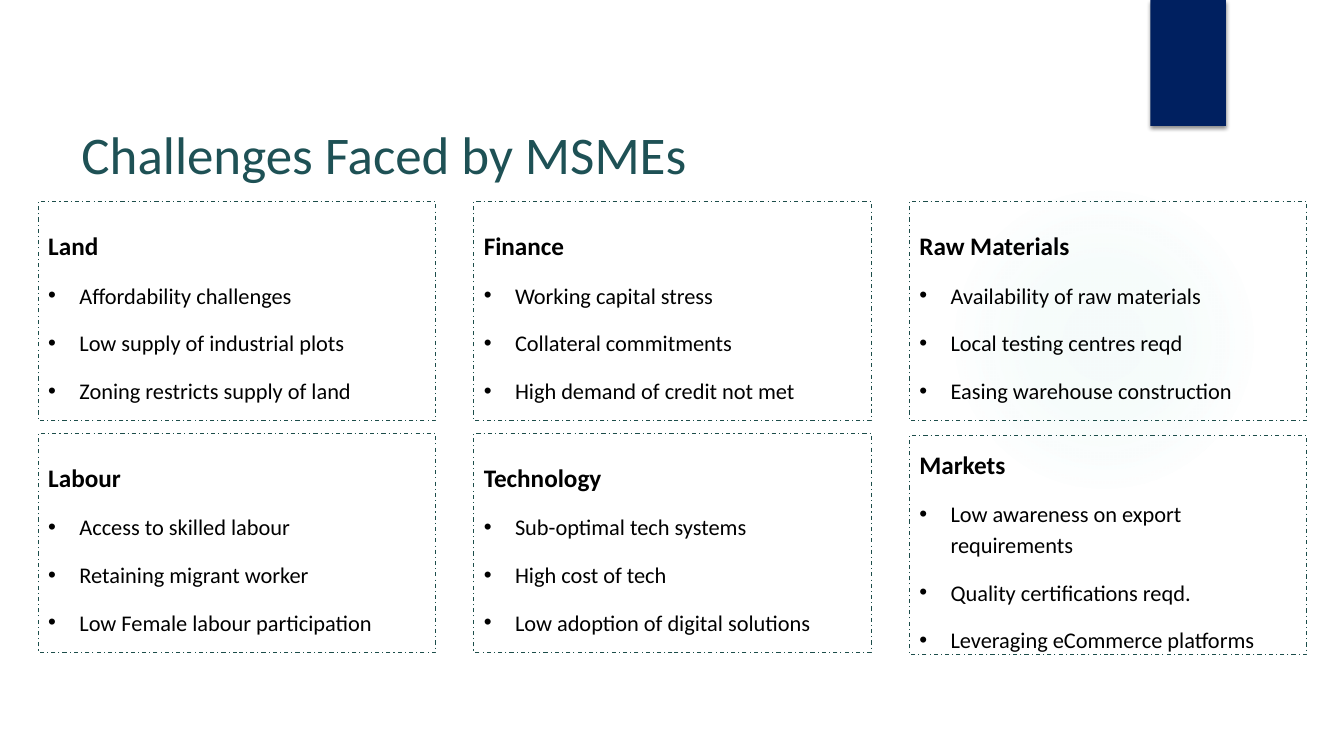
from lxml import etree
from pptx import Presentation
from pptx import oxml
from pptx import util as u
from pptx.dml.color import RGBColor
from pptx.enum import dml, shapes, text
from pptx.oxml import ns

EMU_PER_PX = 9144  # 100 px to the inch
FONT = "Calibri"
BLACK = RGBColor(0x00, 0x00, 0x00)
NAVY = RGBColor(0x00, 0x20, 0x60)
TITLE_TEAL = RGBColor(0x1E, 0x51, 0x55)
BORDER_TEAL = RGBColor(0x1C, 0x4D, 0x4A)
GLOW_TEAL = RGBColor(0x7C, 0xCE, 0xC9)

CARD_LEFT, CARD_STEP = 38, 432
CARD_WIDTH, CARD_HEIGHT = 394, 217
INDENT = 31

# Rows of cards: one (top, heading, points) for each column
CHALLENGES = [
    [
        (200, "Land", ["Affordability challenges", "Low supply of industrial plots",
                       "Zoning restricts supply of land"]),
        (200, "Finance", ["Working capital stress", "Collateral commitments",
                          "High demand of credit not met"]),
        (200, "Raw Materials", ["Availability of raw materials", "Local testing centres reqd",
                                "Easing warehouse construction"]),
    ],
    [
        (430, "Labour", ["Access to skilled labour", "Retaining migrant worker",
                         "Low Female labour participation"]),
        (430, "Technology", ["Sub-optimal tech systems", "High cost of tech",
                             "Low adoption of digital solutions"]),
        (432, "Markets", ["Low awareness on export requirements",
                          "Quality certifications reqd.",
                          "Leveraging eCommerce platforms"]),
    ],
]


def px(length):
    return u.Emu(length * EMU_PER_PX)


def apply(target, values):
    for name, value in values.items():
        setattr(target, name, value)


def add_run(paragraph, words, size, color, bold=False):
    run = paragraph.add_run()
    run.text = words
    apply(run.font, {"name": FONT, "size": u.Pt(size), "bold": bold})
    run.font.color.rgb = color


def add_plain_shape(slide, kind, left, top, width, height):
    shape = slide.shapes.add_shape(kind, px(left), px(top), px(width), px(height))
    shape.shadow.inherit = False
    shape.fill.background()
    shape.line.fill.background()
    return shape


def add_glow(slide):
    glow = add_plain_shape(slide, shapes.MSO_SHAPE.OVAL, 941, 183, 308, 308)
    stops = "".join(
        f'<a:gs pos="{pos * 1000}"><a:srgbClr val="{GLOW_TEAL}">'
        f'<a:alpha val="{alpha * 1000}"/></a:srgbClr></a:gs>'
        for pos, alpha in [(0, 7), (36, 6), (69, 0)])
    gradient = oxml.parse_xml(
        f'<a:gradFill {ns.nsdecls("a")}><a:gsLst>{stops}</a:gsLst><a:path path="circle">'
        '<a:fillToRect l="50000" t="50000" r="50000" b="50000"/></a:path></a:gradFill>')
    properties = glow.element.spPr
    properties.replace(properties.find(ns.qn("a:noFill")), gradient)


def add_ribbon(slide):
    ribbon = add_plain_shape(slide, shapes.MSO_SHAPE.RECTANGLE, 1141, 0, 75, 125)
    ribbon.fill.solid()
    ribbon.fill.fore_color.rgb = NAVY
    effects = ribbon.element.spPr.find(ns.qn("a:effectLst"))
    shadow = etree.SubElement(effects, ns.qn("a:outerShdw"), blurRad=str(u.Pt(3)),
                              dist=str(u.Pt(2)), dir="5400000", rotWithShape="0")
    tint = etree.SubElement(shadow, ns.qn("a:srgbClr"), val=str(BLACK))
    etree.SubElement(tint, ns.qn("a:alpha"), val="45000")


def add_title(slide, words):
    title = slide.shapes.add_textbox(px(71), px(120), px(1029), px(65))
    apply(title.text_frame, {
        "word_wrap": True, "vertical_anchor": text.MSO_ANCHOR.MIDDLE,
        "margin_left": px(10), "margin_right": px(10), "margin_top": 0, "margin_bottom": 0})
    add_run(title.text_frame.paragraphs[0], words, 37.8, TITLE_TEAL)


def add_bullet(paragraph):
    properties = paragraph._p.get_or_add_pPr()
    properties.set("marL", str(px(INDENT)))
    properties.set("indent", str(px(-INDENT)))
    color = etree.SubElement(properties, ns.qn("a:buClr"))
    etree.SubElement(color, ns.qn("a:srgbClr"), val=str(BLACK))
    etree.SubElement(properties, ns.qn("a:buFont"), typeface="Arial")
    etree.SubElement(properties, ns.qn("a:buChar"), char="•")


def add_card(slide, left, top, heading, points):
    card = add_plain_shape(slide, shapes.MSO_SHAPE.RECTANGLE,
                           left, top, CARD_WIDTH, CARD_HEIGHT)
    card.line.color.rgb = BORDER_TEAL
    apply(card.line, {"width": u.Pt(0.75), "dash_style": dml.MSO_LINE.DASH_DOT})
    frame = card.text_frame
    apply(frame, {
        "word_wrap": True, "vertical_anchor": text.MSO_ANCHOR.MIDDLE,
        "margin_left": px(10), "margin_right": px(10),
        "margin_top": px(18), "margin_bottom": px(10)})
    spacing = {"alignment": text.PP_ALIGN.LEFT, "line_spacing": 1.15, "space_after": u.Pt(6)}

    apply(frame.paragraphs[0], spacing)
    add_run(frame.paragraphs[0], heading, 18, BLACK, bold=True)
    for point in points:
        paragraph = frame.add_paragraph()
        add_bullet(paragraph)
        apply(paragraph, {**spacing, "space_before": u.Pt(6)})
        add_run(paragraph, point, 16, BLACK)


def main():
    deck = Presentation()
    apply(deck, {"slide_width": px(1333), "slide_height": px(750)})
    slide = deck.slides.add_slide(deck.slide_layouts[6])

    # Decoration and title
    add_glow(slide)
    add_ribbon(slide)
    add_title(slide, "Challenges Faced by MSMEs")

    # Grid of challenges
    for row in CHALLENGES:
        for column, (top, heading, points) in enumerate(row):
            add_card(slide, CARD_LEFT + column * CARD_STEP, top, heading, points)

    deck.save("out.pptx")


if __name__ == "__main__":
    main()
